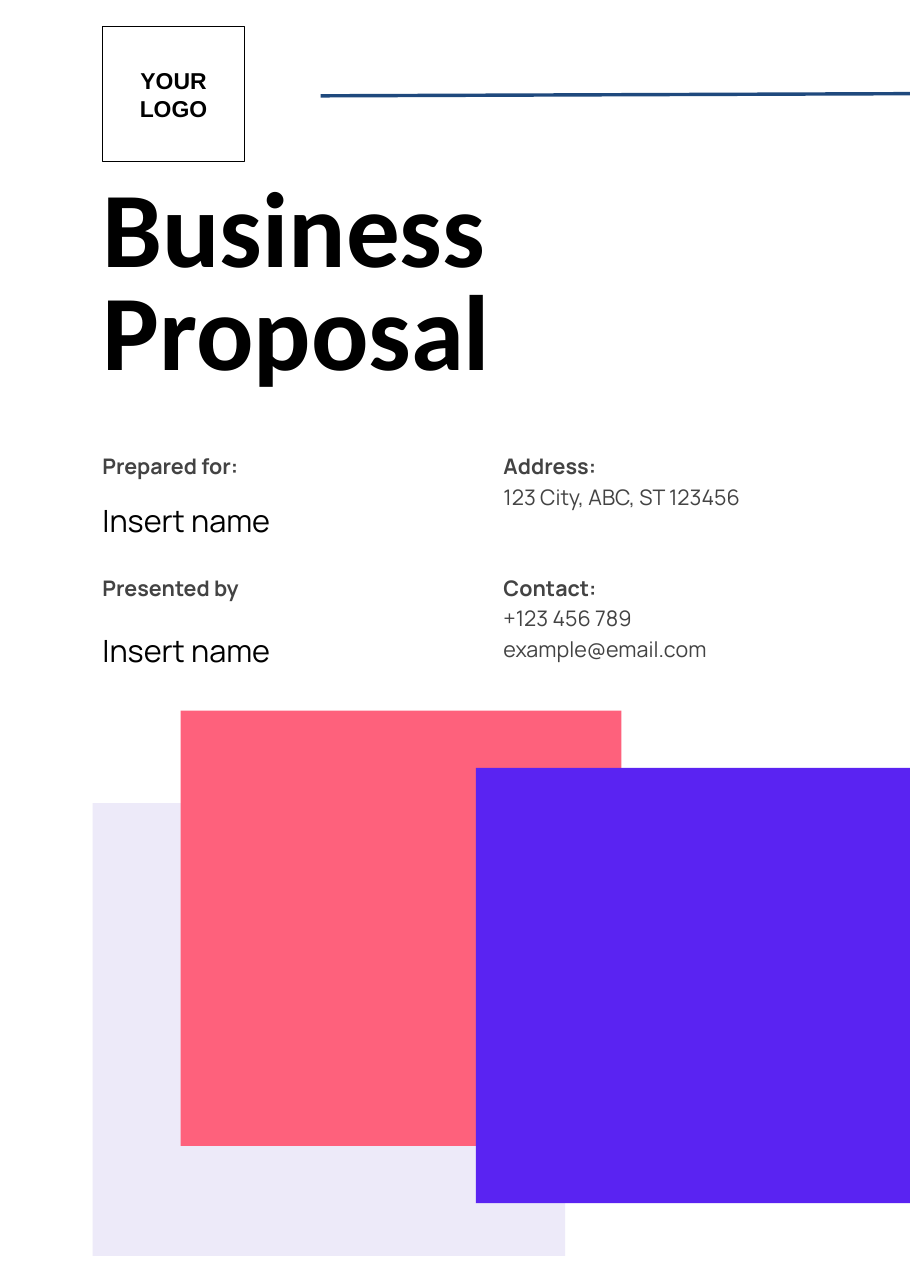
import pptx
import pptx.dml.color
import pptx.enum.shapes
import pptx.enum.text
import pptx.oxml.ns
import pptx.util
from lxml import etree

RGBColor = pptx.dml.color.RGBColor
BLACK = RGBColor(0x00, 0x00, 0x00)
WHITE = RGBColor(0xFF, 0xFF, 0xFF)
GREY = RGBColor(0x43, 0x43, 0x43)
NAVY = RGBColor(0x1F, 0x49, 0x7D)
LAVENDER = RGBColor(0xED, 0xEA, 0xF9)
CORAL = RGBColor(0xFE, 0x61, 0x7C)
VIOLET = RGBColor(0x5A, 0x23, 0xF2)

COLUMNS, ROWS = 82.6, 116.9  # grid cells are a tenth of an inch square
LEFT, RIGHT = 9.3, 45.7      # left edges of the two text columns
DETAIL_WIDTH = 29
UPPER, LOWER = 40.7, 51.7    # top rows of the two detail bands


def cells(count):
    """Length of a number of grid cells."""
    return pptx.util.Inches(count / 10)


def write(para, text, font="Manrope", size=14, color=GREY, bold=False,
          spacing=None, align=None):
    """Fill a paragraph with one formatted span."""
    para.line_spacing = spacing
    para.alignment = align
    span = para.add_run()
    span.text = text
    span.font.name = font
    span.font.size = pptx.util.Pt(size)
    span.font.color.rgb = color
    span.font.bold = bold


class Cover:
    def __init__(self, deck):
        self.page = deck.slides.add_slide(deck.slide_layouts[6])
        self.page.background.fill.solid()
        self.page.background.fill.fore_color.rgb = WHITE

    def text(self, left, top, width, height, lines, spacing=1.2):
        """Add a text box; each line is a pair of text and format."""
        box = self.page.shapes.add_textbox(*map(cells, (left, top, width, height)))
        frame = box.text_frame
        frame.word_wrap = True
        frame.auto_size = pptx.enum.text.MSO_AUTO_SIZE.SHAPE_TO_FIT_TEXT
        frame.margin_left = frame.margin_right = 0
        frame.margin_top = frame.margin_bottom = 0
        for index, (words, style) in enumerate(lines):
            para = frame.add_paragraph() if index else frame.paragraphs[0]
            write(para, words, spacing=spacing, **style)

    def detail(self, left, top, height, heading, *lines):
        """Add a bold heading with plain lines below it."""
        self.text(left, top, DETAIL_WIDTH, height,
                  [(heading, {"bold": True})] + [(line, {}) for line in lines])

    def name(self, top):
        """Add a name to be filled in."""
        self.text(LEFT, top, DETAIL_WIDTH, 3.4,
                  [("Insert name", {"size": 20, "color": BLACK})])

    def block(self, left, top, width, height, fill, outline=None):
        """Add a filled rectangle, with an outline if a colour is given."""
        shape = self.page.shapes.add_shape(
            pptx.enum.shapes.MSO_SHAPE.RECTANGLE,
            *map(cells, (left, top, width, height)))
        shape.shadow.inherit = False
        shape.fill.solid()
        shape.fill.fore_color.rgb = fill
        if outline is None:
            shape.line.fill.background()
        else:
            shape.line.color.rgb = outline
            shape.line.width = pptx.util.Pt(0.75)
        return shape

    def logo_frame(self, left, top, width, height, text):
        frame = self.block(left, top, width, height, WHITE, BLACK).text_frame
        frame.word_wrap = True
        frame.vertical_anchor = pptx.enum.text.MSO_ANCHOR.MIDDLE
        frame.margin_left = frame.margin_right = cells(1)
        frame.margin_top = frame.margin_bottom = cells(1)
        write(frame.paragraphs[0], text, font="Arial", size=15, color=BLACK,
              bold=True, align=pptx.enum.text.PP_ALIGN.CENTER)

    def rule(self, left, top, right, bottom):
        line = self.page.shapes.add_connector(
            pptx.enum.shapes.MSO_CONNECTOR.STRAIGHT,
            *map(cells, (left, top, right, bottom)))
        line.line.color.rgb = NAVY
        line.line.width = pptx.util.Pt(2.25)
        properties = line._element.spPr
        etree.SubElement(properties, pptx.oxml.ns.qn("a:effectLst"))


def main():
    deck = pptx.Presentation()
    deck.slide_width, deck.slide_height = cells(COLUMNS), cells(ROWS)
    cover = Cover(deck)

    title = {"font": "Calibri", "size": 70, "color": BLACK, "bold": True}
    cover.text(LEFT, 16.8, 46.4, 18.9, [("Business Proposal", title)], spacing=0.8)
    cover.rule(29.1, 8.7, COLUMNS, 8.5)
    cover.logo_frame(LEFT, 2.4, 12.9, 12.3, "YOUR LOGO")

    cover.detail(LEFT, UPPER, 2.4, "Prepared for:")
    cover.name(44.9)
    cover.detail(LEFT, LOWER, 2.4, "Presented by")
    cover.name(56.7)
    cover.detail(RIGHT, UPPER, 5.2, "Address:", "123 City, ABC, ST 123456")
    cover.detail(RIGHT, LOWER, 8, "Contact:", "+123 456 789", "example@email.com")

    cover.block(8.4, 72.9, 42.9, 41.1, LAVENDER)
    cover.block(16.4, 64.5, 40, 39.5, CORAL)
    cover.block(43.2, 69.7, COLUMNS - 43.2, 39.5, VIOLET)
    deck.save("out.pptx")


if __name__ == "__main__":
    main()
